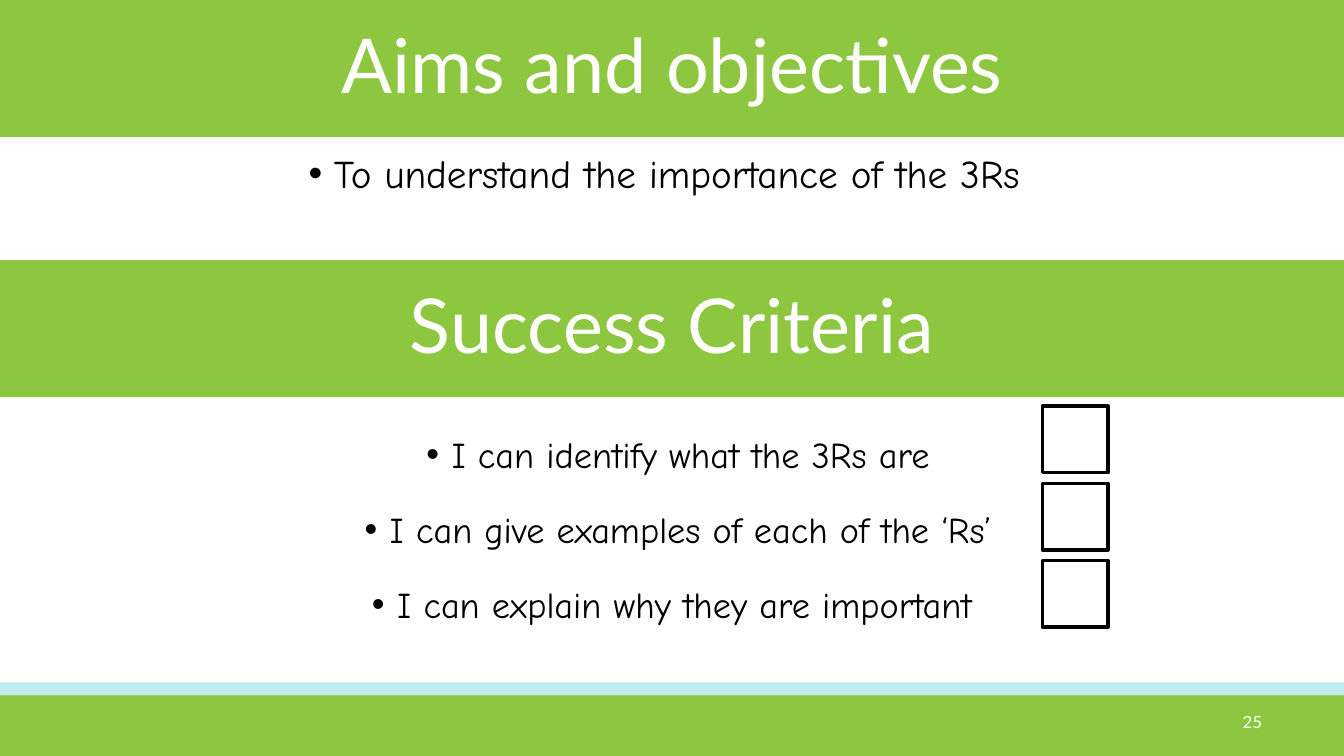
from lxml.etree import SubElement
from pptx import Presentation
from pptx.dml.color import RGBColor
from pptx.enum.shapes import MSO_SHAPE
from pptx.enum.text import MSO_ANCHOR, PP_ALIGN
from pptx.oxml.ns import qn
from pptx.util import Inches, Pt

COLORS = {"green": "8DC63F", "aqua": "20BFD0", "white": "FFFFFF", "black": "000000"}
HEADING = {"font": "Lato", "size": 54, "color": "white", "anchor": MSO_ANCHOR.MIDDLE,
           "format": {"alignment": PP_ALIGN.CENTER, "line_spacing": 0.9}}
AIM = {"font": "Comic Neue", "size": 28, "color": "black", "anchor": MSO_ANCHOR.TOP, "bullet": "•",
       "format": {"alignment": PP_ALIGN.CENTER, "line_spacing": 0.9, "space_before": Pt(10)}}
CRITERIA = AIM | {"size": 25.9, "format": AIM["format"] | {"line_spacing": 1.4}}
PAGE_NUMBER = HEADING | {"size": 12, "format": {"alignment": PP_ALIGN.RIGHT}}


class SlideBuilder:
    """Draws styled elements on a slide grid of 100 columns and 75 rows."""

    def __init__(self, presentation):
        self.slide = presentation.slides.add_slide(presentation.slide_layouts[6])
        self.column = presentation.slide_width / 100
        self.row = presentation.slide_height / 75

    def place(self, left, top, width, height):
        return (round(left * self.column), round(top * self.row),
                round(width * self.column), round(height * self.row))

    def rectangle(self, *cells):
        shape = self.slide.shapes.add_shape(MSO_SHAPE.RECTANGLE, *self.place(*cells))
        shape.shadow.inherit = False
        return shape

    def band(self, top, height, color="green", opacity=100):
        shape = self.rectangle(0, top, 100, height)
        shape.fill.solid()
        shape.fill.fore_color.rgb = RGBColor.from_string(COLORS[color])
        shape.line.fill.background()
        if opacity < 100:
            fill_color = shape.fill._xPr.find(qn("a:solidFill"))[0]
            SubElement(fill_color, qn("a:alpha"), val=str(opacity * 1000))
        return shape

    def checkbox(self, *cells):
        shape = self.rectangle(*cells)
        shape.fill.background()
        shape.line.color.rgb = RGBColor.from_string(COLORS["black"])
        shape.line.width = Pt(2.5)

    def text(self, cells, lines, style):
        shape = self.slide.shapes.add_textbox(*self.place(*cells))
        self.fill_text(shape, lines, style)

    def heading(self, top, text):
        self.fill_text(self.band(top, 13.6), [text], HEADING)

    def fill_text(self, shape, lines, style):
        frame = shape.text_frame
        frame.word_wrap = True
        frame.vertical_anchor = style["anchor"]
        for index, line in enumerate(lines):
            paragraph = frame.add_paragraph() if index else frame.paragraphs[0]
            for name, value in style["format"].items():
                setattr(paragraph, name, value)
            if "bullet" in style:
                self.bullet(paragraph, style["bullet"])
            run = paragraph.add_run()
            run.text = line
            for name, value in {"name": style["font"], "size": Pt(style["size"])}.items():
                setattr(run.font, name, value)
            run.font.color.rgb = RGBColor.from_string(COLORS[style["color"]])

    def bullet(self, paragraph, symbol):
        properties = paragraph._p.get_or_add_pPr()
        properties.set("marL", str(Inches(0.25)))
        properties.set("indent", str(-Inches(0.25)))
        SubElement(properties, qn("a:buFont"), typeface="Arial")
        SubElement(properties, qn("a:buChar"), char=symbol)


def main():
    presentation = Presentation()
    presentation.slide_width = Inches(13.33)
    presentation.slide_height = Inches(7.5)
    builder = SlideBuilder(presentation)

    builder.band(67.7, 2.4, "aqua", 29)
    builder.band(69, 6)
    builder.heading(0, "Aims and objectives")
    builder.text((6.9, 14.8, 85.05, 6.5), ["To understand the importance of the 3Rs"], AIM)
    builder.text((72.15, 69.6, 22.5, 4), ["25"], PAGE_NUMBER)
    builder.heading(25.8, "Success Criteria")
    criteria = ["I can identify what the 3Rs are",
                "I can give examples of each of the ‘Rs’",
                "I can explain why they are important "]
    builder.text((7.8, 40.7, 85.3, 22.7), criteria, CRITERIA)
    for index in range(len(criteria)):
        builder.checkbox(77.55, 40.3 + 7.65 * index, 4.9, 6.6)

    presentation.save("out.pptx")


if __name__ == "__main__":
    main()
